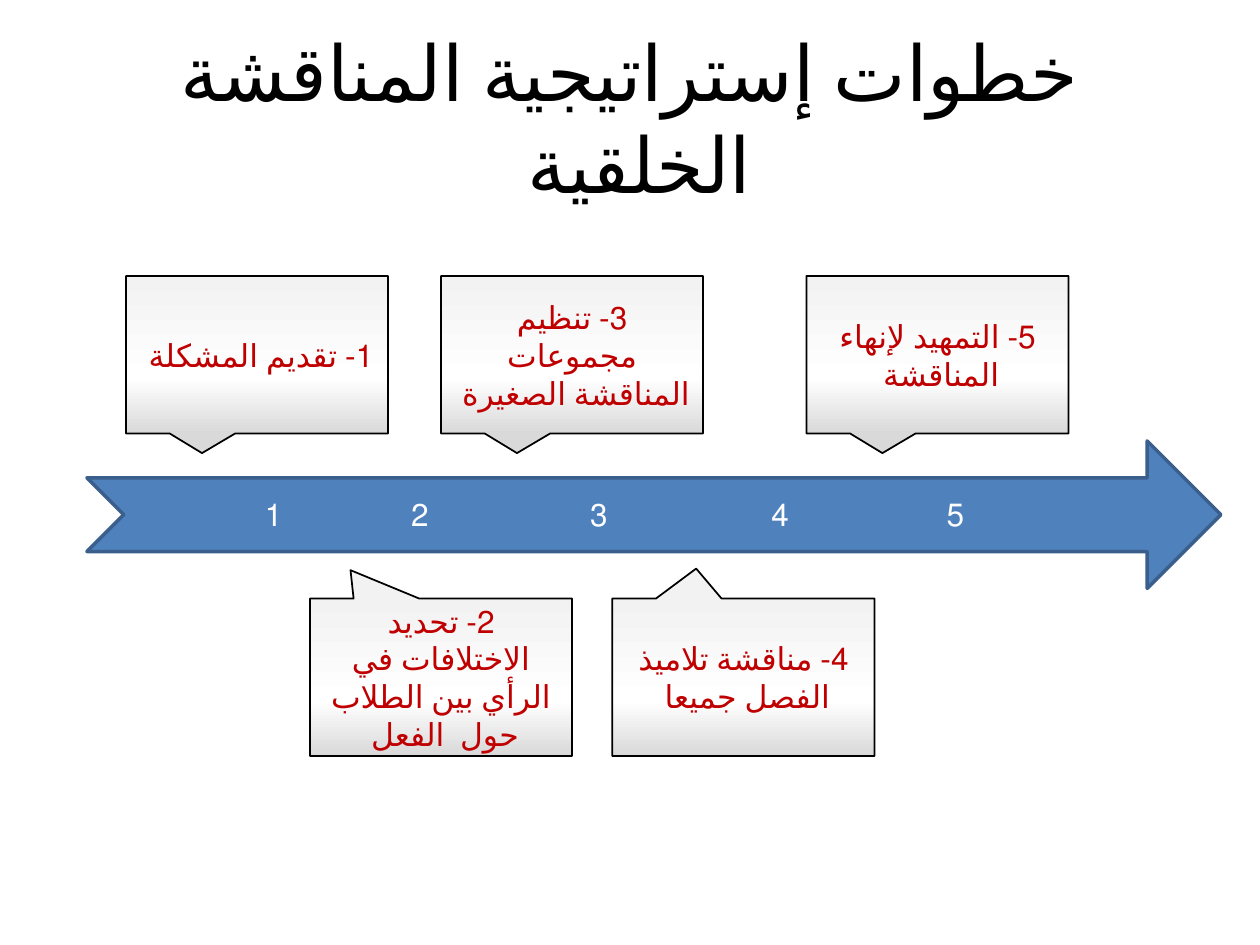
from copy import deepcopy

from pptx import Presentation
from pptx.dml.color import RGBColor
from pptx.enum.lang import MSO_LANGUAGE_ID
from pptx.enum.shapes import MSO_SHAPE
from pptx.enum.text import MSO_ANCHOR, MSO_AUTO_SIZE, PP_ALIGN
from pptx.oxml.ns import qn
from pptx.util import Inches, Pt

ARROW, CALLOUT = MSO_SHAPE.NOTCHED_RIGHT_ARROW, MSO_SHAPE.RECTANGULAR_CALLOUT
MIDDLE, GROW = MSO_ANCHOR.MIDDLE, MSO_AUTO_SIZE.SHAPE_TO_FIT_TEXT
CENTER, RIGHT = PP_ALIGN.CENTER, PP_ALIGN.RIGHT
ARABIC = MSO_LANGUAGE_ID.ARABIC

BLACK = RGBColor(0x00, 0x00, 0x00)
WHITE = RGBColor(0xFF, 0xFF, 0xFF)
RED = RGBColor(0xC0, 0x00, 0x00)
BLUE = RGBColor(0x4F, 0x81, 0xBD)
NAVY = RGBColor(0x3A, 0x5F, 0x8C)
PALE = RGBColor(0xF2, 0xF2, 0xF2)
GRAY = RGBColor(0xD9, 0xD9, 0xD9)

# Content
TITLE = "خطوات إستراتيجية المناقشة الخلقية "
ABOVE, BELOW = 2.19, 4.75
TIP = (-0.21, 0.625)
# number left, callout left, callout top, callout tip, text
STEPS = [
    (1.17, 1.0, ABOVE, TIP, "1- تقديم المشكلة "),
    (2.33, 2.46, BELOW, (-0.345, -0.68),
     "2- تحديد الاختلافات في الرأي بين الطلاب حول  الفعل "),
    (3.75, 3.5, ABOVE, TIP, "3- تنظيم مجموعات المناقشة الصغيرة "),
    (5.19, 4.86, BELOW, (-0.18, -0.69), "4- مناقشة تلاميذ الفصل جميعا "),
    (6.58, 6.4, ABOVE, TIP, "5- التمهيد لإنهاء المناقشة "),
]
STOPS = [(0, PALE), (0.65, WHITE), (1, GRAY)]


def box(*dims):
    return [Inches(d) for d in dims]


def write(shape, text, size=18, color=RED, align=CENTER, anchor=MIDDLE):
    frame = shape.text_frame
    frame.word_wrap = True
    frame.vertical_anchor = anchor
    para = frame.paragraphs[0]
    para.alignment = align
    para._p.get_or_add_pPr().set("rtl", "1")
    run = para.add_run()
    run.text = text
    run.font.name, run.font.size = "Calibri", Pt(size)
    run.font.language_id = ARABIC
    run.font.color.rgb = color


def draw(slide, kind, dims, line, width):
    shape = slide.shapes.add_shape(kind, *box(*dims))
    shape.shadow.inherit = False
    shape.line.color.rgb, shape.line.width = line, Pt(width)
    return shape


def shade(shape):
    fill = shape.fill
    fill.gradient()
    fill.gradient_angle = 270
    first = next(shape._element.spPr.iter(qn("a:gs")))
    first.addnext(deepcopy(first))
    for stop, (place, color) in zip(fill.gradient_stops, STOPS):
        stop.position, stop.color.rgb = place, color


def main():
    deck = Presentation()
    deck.slide_width, deck.slide_height = box(10, 7.5)
    slide = deck.slides.add_slide(deck.slide_layouts[5])

    # Title
    title = slide.shapes.title
    title.left, title.top, title.width, title.height = box(0.5, 0.3, 9, 1.25)
    write(title, TITLE, size=44, color=BLACK)

    # Timeline arrow
    arrow = draw(slide, ARROW, (0.69, 3.5, 9, 1.17), NAVY, 2)
    arrow.fill.solid()
    arrow.fill.fore_color.rgb = BLUE

    # Numbers on the arrow and their callouts
    for num, (mark, left, top, tip, text) in enumerate(STEPS, 1):
        label = slide.shapes.add_textbox(*box(mark, 3.88, 1.17, 0.4))
        write(label, str(num), color=WHITE, align=RIGHT, anchor=MSO_ANCHOR.TOP)
        label.text_frame.auto_size = GROW

        note = draw(slide, CALLOUT, (left, top, 2.08, 1.25), BLACK, 1)
        note.adjustments[0], note.adjustments[1] = tip
        shade(note)
        write(note, text)

    deck.save("out.pptx")


if __name__ == "__main__":
    main()
